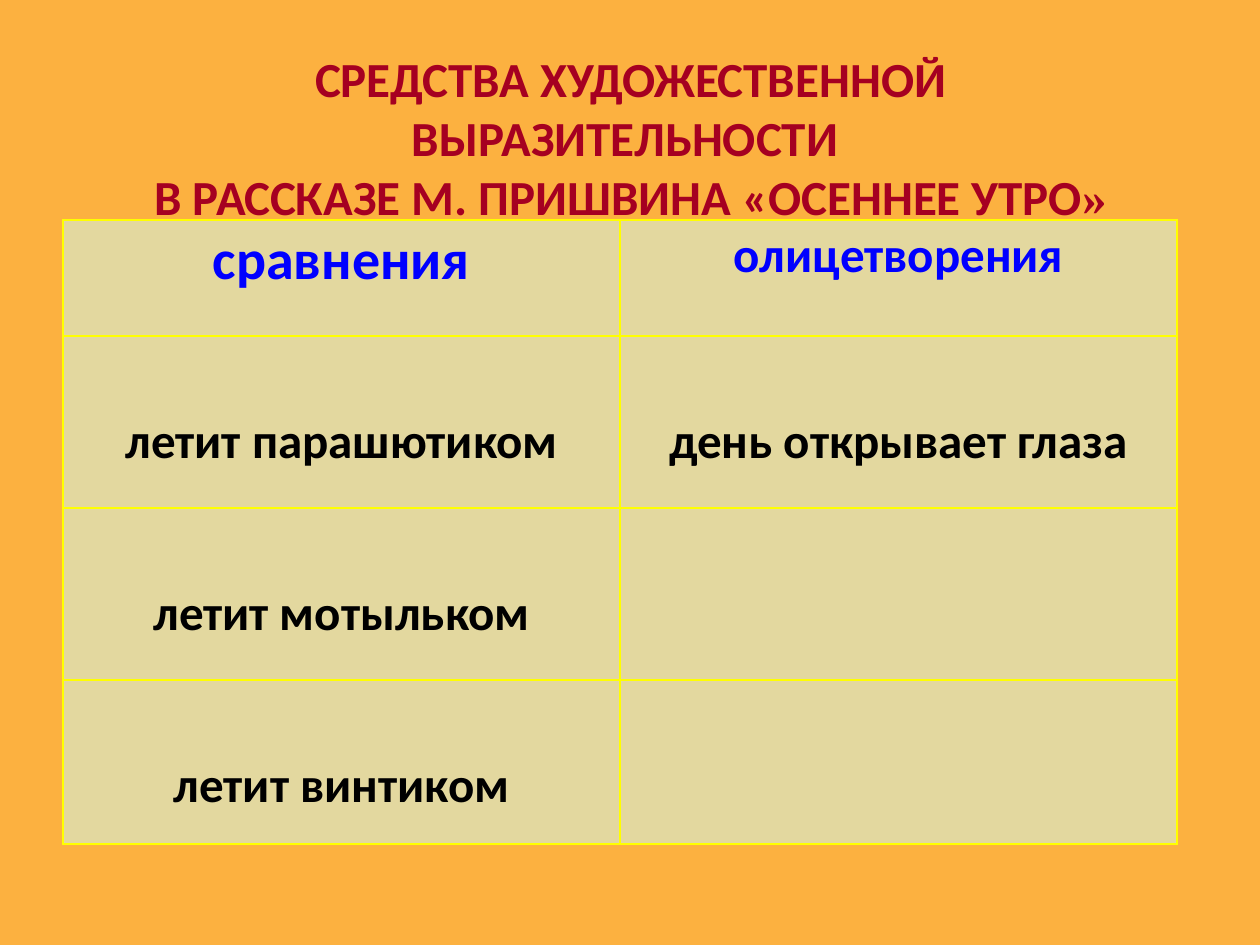
from lxml import etree
from pptx import Presentation, util as u
from pptx.dml.color import RGBColor
from pptx.enum import text
from pptx.oxml import ns

COLORS = {
    "background": "FCB140",
    "title": "A50021",
    "heading": "0000FF",
    "body": "000000",
    "cell": "CCFFFF",
    "border": "FFFF00",
}
ROWS = [
    ("сравнения", "олицетворения"),
    ("летит парашютиком", ""),
    ("летит мотыльком", ""),
    ("летит винтиком", ""),
]
ROW_HEIGHTS = [116, 172, 172, 164]
COLUMN_WIDTH = 557
TEXT_DROP = 76


def px(length):
    return u.Emu(round(length * 914400 / 126))


def write(paragraph, content, size=28, color="body", font="Calibri"):
    paragraph.alignment = text.PP_ALIGN.CENTER
    start = len(paragraph.runs)
    for index, line in enumerate(content.split("\n")):
        if index:
            paragraph.add_line_break()
        paragraph.add_run().text = line
    for run in paragraph.runs[start:]:
        run.font.name = font
        run.font.size = u.Pt(size)
        run.font.bold = True
        run.font.color.rgb = RGBColor.from_string(COLORS[color])


class SlideBuilder:
    def __init__(self, presentation):
        self.slide = presentation.slides.add_slide(presentation.slide_layouts[5])
        fill = self.slide.background.fill
        fill.solid()
        fill.fore_color.rgb = RGBColor.from_string(COLORS["background"])

    def title(self, left, top, width, height, runs):
        shape = self.slide.shapes.title
        shape.left, shape.top = px(left), px(top)
        shape.width, shape.height = px(width), px(height)
        frame = shape.text_frame
        frame.word_wrap = True
        frame.auto_size = text.MSO_AUTO_SIZE.NONE
        frame.vertical_anchor = text.MSO_ANCHOR.MIDDLE
        for content, font in runs:
            write(frame.paragraphs[0], content, color="title", font=font)

    def label(self, left, top, width, height, content):
        shape = self.slide.shapes.add_textbox(px(left), px(top), px(width), px(height))
        frame = shape.text_frame
        frame.word_wrap = True
        frame.margin_top = px(TEXT_DROP)
        write(frame.paragraphs[0], content)

    def table(self, left, top):
        frame = self.slide.shapes.add_table(
            len(ROWS), 2, px(left), px(top), px(2 * COLUMN_WIDTH), px(sum(ROW_HEIGHTS))
        )
        table = frame.table
        table.first_row = table.horz_banding = False
        for column in table.columns:
            column.width = px(COLUMN_WIDTH)
        for row, (words, height) in enumerate(zip(ROWS, ROW_HEIGHTS)):
            table.rows[row].height = px(height)
            for column, content in enumerate(words):
                cell = table.cell(row, column)
                self.style_cell(cell)
                if row:
                    cell.margin_top = px(TEXT_DROP)
                if content:
                    write(
                        cell.text_frame.paragraphs[0],
                        content,
                        size=32 if (row, column) == (0, 0) else 28,
                        color="body" if row else "heading",
                    )

    def style_cell(self, cell):
        cell.fill.solid()
        cell.fill.fore_color.rgb = RGBColor.from_string(COLORS["cell"])
        properties = cell._tc.get_or_add_tcPr()
        color = properties.find(".//" + ns.qn("a:srgbClr"))
        etree.SubElement(color, ns.qn("a:alpha"), val="50000")
        for index, side in enumerate(("a:lnL", "a:lnR", "a:lnT", "a:lnB")):
            line = etree.Element(ns.qn(side), w=str(u.Pt(1.5)))
            fill = etree.SubElement(line, ns.qn("a:solidFill"))
            etree.SubElement(fill, ns.qn("a:srgbClr"), val=COLORS["border"])
            properties.insert(index, line)


def main():
    presentation = Presentation()
    presentation.slide_width = px(1260)
    presentation.slide_height = px(945)
    builder = SlideBuilder(presentation)
    builder.title(95, 42, 1071, 190, [
        ("СРЕДСТВА ХУДОЖЕСТВЕННОЙ ВЫРАЗИТЕЛЬНОСТИ \n"
         "В РАССКАЗЕ М. ПРИШВИНА «ОСЕННЕЕ УТРО", "Calibri"),
        ("»", "Times New Roman"),
    ])
    builder.table(63, 220)
    builder.label(620, 334, COLUMN_WIDTH, 214, "день открывает глаза")
    presentation.save("out.pptx")


if __name__ == "__main__":
    main()
